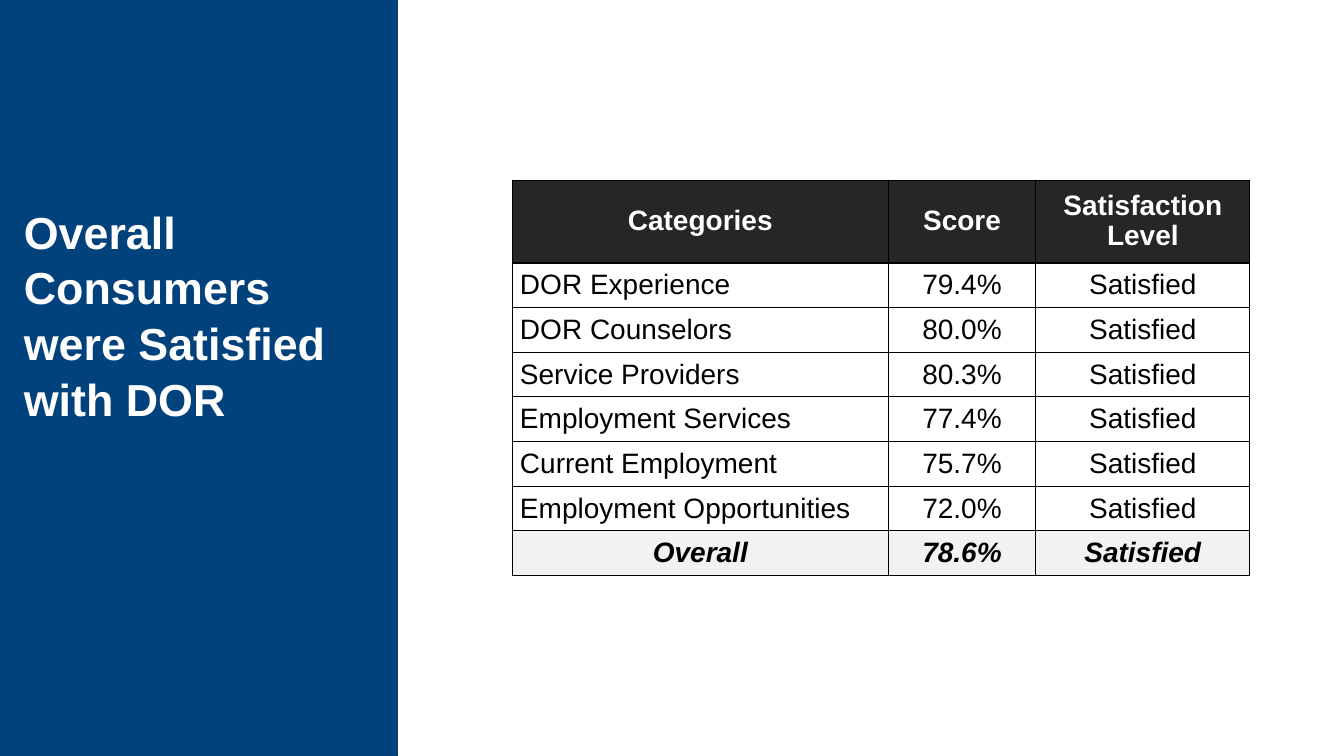
"""Build the consumer satisfaction slide with its score table."""
import lxml.etree
import pptx
import pptx.dml.color
import pptx.enum.shapes
import pptx.enum.text
import pptx.oxml.ns
import pptx.util

COLORS = {
    "panel": "01417C",
    "panel_edge": "01407A",
    "header": "262626",
    "total": "F2F2F2",
    "white": "FFFFFF",
    "black": "000000",
}
ALIGN = pptx.enum.text.PP_ALIGN
MIDDLE = pptx.enum.text.MSO_ANCHOR.MIDDLE
Pt = pptx.util.Pt


def rgb(color):
    """Return the named colour."""
    return pptx.dml.color.RGBColor.from_string(COLORS[color])


def write(frame, text, size=20, color="black", bold=False, italic=False,
          align=ALIGN.LEFT, spacing=1.0):
    """Put one formatted paragraph into a text frame."""
    paragraph = frame.paragraphs[0]
    paragraph.alignment = align
    paragraph.line_spacing = spacing
    run = paragraph.add_run()
    run.text = text
    run.font.name = "Arial"
    run.font.size = Pt(size)
    run.font.bold = bold
    run.font.italic = italic
    run.font.color.rgb = rgb(color)


class SlideBuilder:
    """Hold the slide and the style of its elements."""

    def __init__(self, slide, margin=5.4, border=1):
        """Keep the slide, the cell margin and the border width."""
        self.slide = slide
        self.margin = margin
        self.border = border

    def panel(self, left, top, width, height):
        """Draw the coloured side panel."""
        panel = self.slide.shapes.add_shape(
            pptx.enum.shapes.MSO_SHAPE.RECTANGLE,
            Pt(left), Pt(top), Pt(width), Pt(height))
        panel.shadow.inherit = False
        panel.fill.solid()
        panel.fill.fore_color.rgb = rgb("panel")
        panel.line.color.rgb = rgb("panel_edge")
        panel.line.width = Pt(1)

    def title(self, text, left, top, width, height):
        """Add the heading on the panel."""
        heading = self.slide.shapes.add_textbox(
            Pt(left), Pt(top), Pt(width), Pt(height)).text_frame
        heading.word_wrap = True
        heading.vertical_anchor = MIDDLE
        write(heading, text, size=32, color="white", bold=True, spacing=1.04)

    def outline(self, cell):
        """Draw a black border on all sides of a cell."""
        properties = cell._tc.get_or_add_tcPr()
        for position, side in enumerate(("lnL", "lnR", "lnT", "lnB")):
            edge = lxml.etree.Element(
                pptx.oxml.ns.qn(f"a:{side}"), w=str(Pt(self.border)))
            fill = lxml.etree.SubElement(edge, pptx.oxml.ns.qn("a:solidFill"))
            lxml.etree.SubElement(
                fill, pptx.oxml.ns.qn("a:srgbClr"), val=COLORS["black"])
            properties.insert(position, edge)

    def cell(self, cell, text, fill=None, **text_format):
        """Fill, outline and write one table cell."""
        cell.margin_left = cell.margin_right = Pt(self.margin)
        cell.margin_top = cell.margin_bottom = 0
        cell.vertical_anchor = MIDDLE
        if fill:
            cell.fill.solid()
            cell.fill.fore_color.rgb = rgb(fill)
        else:
            cell.fill.background()
        self.outline(cell)
        write(cell.text_frame, text, **text_format)

    def table(self, rows, left, top, widths, header_height, row_height):
        """Add a table with a header row first and a total row last."""
        heights = [header_height] + [row_height] * (len(rows) - 1)
        table = self.slide.shapes.add_table(
            len(rows), len(widths), Pt(left), Pt(top),
            Pt(sum(widths)), Pt(sum(heights))).table
        table.first_row = table.horz_banding = False
        for column, width in zip(table.columns, widths):
            column.width = Pt(width)
        for row, height in zip(table.rows, heights):
            row.height = Pt(height)
        formats = {
            0: dict(fill="header", color="white", bold=True, spacing=0.96),
            len(rows) - 1: dict(fill="total", bold=True, italic=True),
        }
        for row_number, row in enumerate(rows):
            for column_number, text in enumerate(row):
                is_label = column_number == 0 and row_number not in formats
                self.cell(table.cell(row_number, column_number), text,
                          align=ALIGN.LEFT if is_label else ALIGN.CENTER,
                          **formats.get(row_number, {}))


def main():
    """Build and save the slide."""
    deck = pptx.Presentation()
    deck.slide_width, deck.slide_height = Pt(960), Pt(540)
    builder = SlideBuilder(deck.slides.add_slide(deck.slide_layouts[6]))
    builder.panel(0, 0, 283.7, 540)
    builder.title("Overall Consumers were Satisfied with DOR",
                  10, 8.6, 264.2, 431.3)
    scores = {
        "DOR Experience": "79.4%",
        "DOR Counselors": "80.0%",
        "Service Providers": "80.3%",
        "Employment Services": "77.4%",
        "Current Employment": "75.7%",
        "Employment Opportunities": "72.0%",
        "Overall": "78.6%",
    }
    rows = [("Categories", "Score", "Satisfaction Level")]
    rows += [(category, score, "Satisfied")
             for category, score in scores.items()]
    builder.table(rows, 366, 129, (268.5, 105.4, 152.9), 58.8, 31.9)
    deck.save("out.pptx")


if __name__ == "__main__":
    main()
